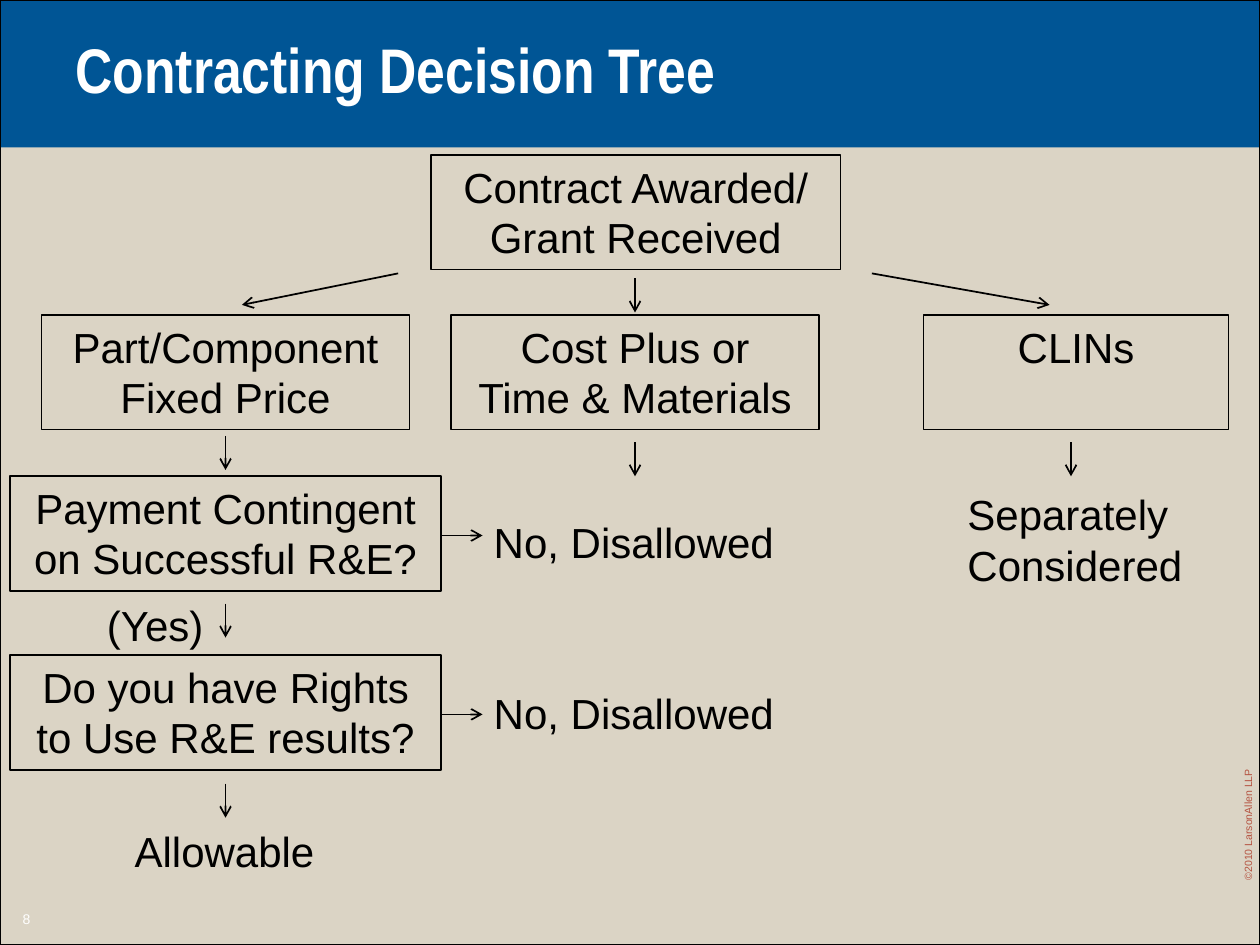
"""Build the Contracting Decision Tree slide."""
from lxml.etree import SubElement
from pptx import Presentation
from pptx.dml.color import RGBColor
from pptx.enum.shapes import MSO_CONNECTOR, MSO_SHAPE
from pptx.enum.text import MSO_ANCHOR, MSO_AUTO_SIZE, PP_ALIGN
from pptx.oxml.ns import qn
from pptx.util import Inches, Pt

COLORS = {
    name: RGBColor.from_string(value)
    for name, value in {
        "background": "DBD4C5",
        "banner": "005595",
        "ink": "000000",
        "white": "FFFFFF",
        "copyright": "B55341",
    }.items()
}


def add_rect(s, left, top, width, height, line_width=None, fill=None):
    sp = s.shapes.add_shape(
        MSO_SHAPE.RECTANGLE, Inches(left), Inches(top), Inches(width), Inches(height)
    )
    sp.shadow.inherit = False
    if fill:
        sp.fill.solid()
        sp.fill.fore_color.rgb = COLORS[fill]
    else:
        sp.fill.background()
    if line_width:
        sp.line.color.rgb = COLORS["ink"]
        sp.line.width = Pt(line_width)
    else:
        sp.line.fill.background()
    return sp


def write(sp, text, size=24, color="ink", align=PP_ALIGN.LEFT, wrap=True,
          font="Arial", bold=False, anchor=MSO_ANCHOR.TOP):
    tf = sp.text_frame
    tf.text = text
    tf.word_wrap = wrap
    tf.auto_size = MSO_AUTO_SIZE.NONE
    tf.vertical_anchor = anchor
    for p in tf.paragraphs:
        p.alignment = align
        for r in p.runs:
            r.font.name = font
            r.font.size = Pt(size)
            r.font.bold = bold
            r.font.color.rgb = COLORS[color]


prs = Presentation()
prs.slide_width, prs.slide_height = Inches(10), Inches(7.5)
s = prs.slides.add_slide(prs.slide_layouts[5])
s.background.fill.solid()
s.background.fill.fore_color.rgb = COLORS["background"]

banner = add_rect(s, 0, 0, 10, 1.17, fill="banner")
s.shapes._spTree.insert(2, banner._element)
add_rect(s, 0, 0, 10, 7.5, line_width=0.75)

title = s.shapes.title
title.left, title.top = Inches(0.5), Inches(0.17)
title.width, title.height = Inches(9), Inches(0.75)
write(title, "Contracting Decision Tree", 36, "white", font="Arial Narrow",
      bold=True, anchor=MSO_ANCHOR.MIDDLE)

footer = s.shapes.add_textbox(Inches(9.32), Inches(6.4), Inches(1.17), Inches(0.2))
footer.rotation = 270
write(footer, "©2010 LarsonAllen LLP", 6, "copyright")
number = s.shapes.add_textbox(Inches(0), Inches(7.18), Inches(0.42), Inches(0.23))
write(number, "8", 8, "white", PP_ALIGN.CENTER)

boxes = [
    ("Contract Awarded/\nGrant Received", 3.42, 1.23, 3.25),
    ("Part/Component\nFixed Price", 0.33, 2.5, 2.92),
    ("Cost Plus or\nTime & Materials", 3.58, 2.5, 2.92),
    ("CLINs", 7.33, 2.5, 2.42),
    ("Payment Contingent on Successful R&E?", 0.08, 3.78, 3.42),
    ("Do you have Rights to Use R&E results?", 0.08, 5.2, 3.42),
]
for text, left, top, width in boxes:
    sp = add_rect(s, left, top, width, 0.91, line_width=1)
    write(sp, text, align=PP_ALIGN.CENTER)

outcomes = [
    ("No, Disallowed", 3.82, 4.05, 2.45, 0.5),
    ("No, Disallowed", 3.82, 5.41, 2.45, 0.5),
    ("(Yes)", 0.75, 4.71, 0.98, 0.5),
    ("Allowable", 0.97, 6.5, 1.65, 0.5),
    ("Separately\nConsidered", 7.58, 3.83, 1.93, 0.91),
]
for text, *bounds in outcomes:
    sp = s.shapes.add_textbox(*(Inches(v) for v in bounds))
    write(sp, text, wrap=False)

down_starts = [(1.79, 3.46), (1.79, 4.79), (1.79, 6.22),
               (5.04, 2.21), (5.04, 3.51), (8.5, 3.51)]
arrows = [(x, y, x, y + 0.27) for x, y in down_starts]
arrows += [(3.5, y, 3.83, y) for y in (4.25, 5.67)]
arrows += [(3.16, 2.17, 1.92, 2.42), (6.92, 2.17, 8.33, 2.42)]
for ends in arrows:
    arrow = s.shapes.add_connector(MSO_CONNECTOR.STRAIGHT, *(Inches(v) for v in ends))
    arrow.line.color.rgb = COLORS["ink"]
    arrow.line.width = Pt(1)
    SubElement(arrow.line._get_or_add_ln(), qn("a:tailEnd"), type="arrow")
    SubElement(arrow._element.spPr, qn("a:effectLst"))

prs.save("out.pptx")
